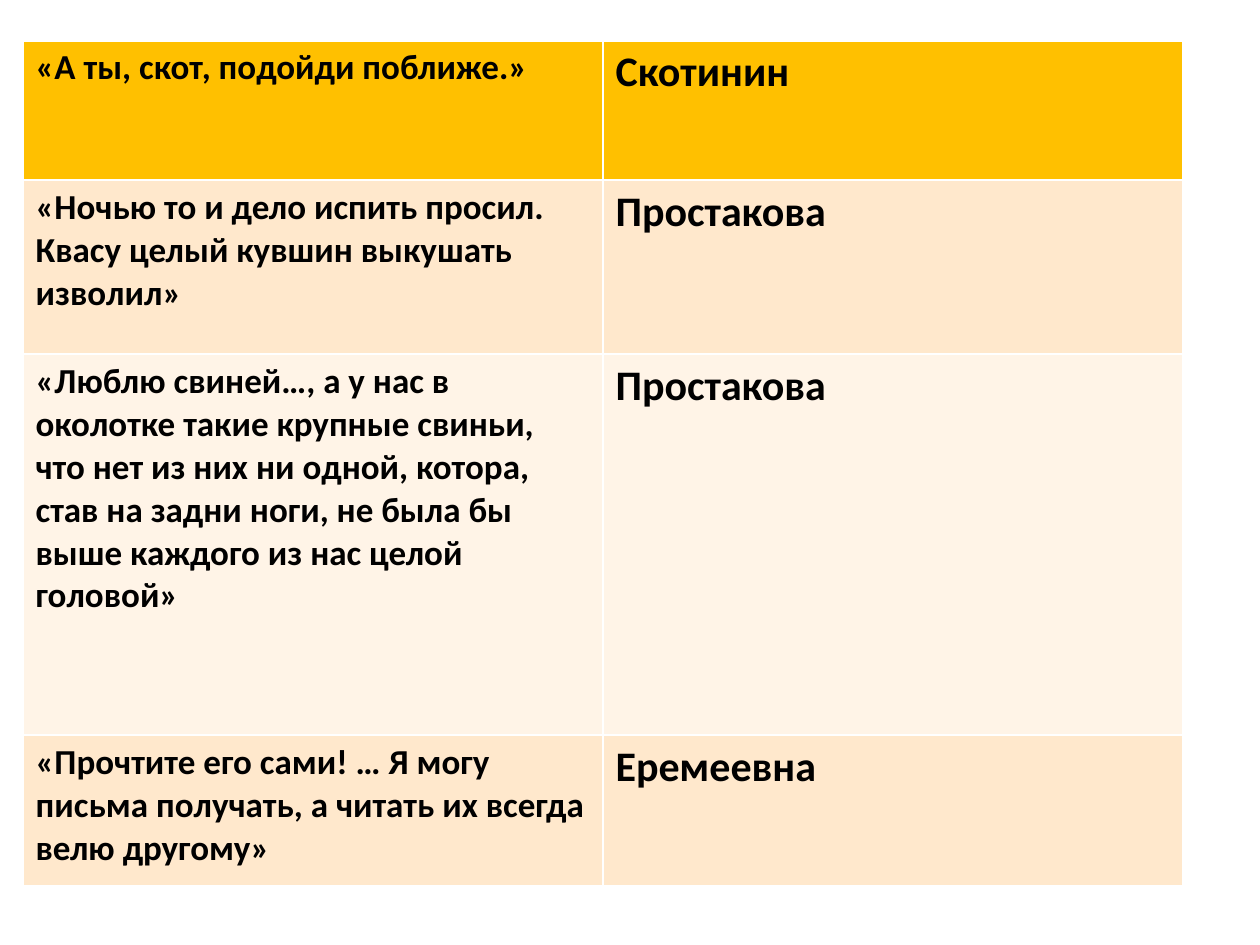
from lxml.etree import SubElement
from pptx import Presentation
from pptx.dml.color import RGBColor
from pptx.oxml.ns import qn
from pptx.util import Emu, Pt

EMU_PER_PX = 914400 / 126
COLORS = {
    "text": "000000",
    "border": "FFFFFF",
    "header": "FFC000",
    "band": "FFE8CC",
    "light": "FFF4E7",
}
COLUMN_WIDTHS = [580, 580]
QUOTE_SIZE, SPEAKER_SIZE = 20, 24
ROWS = [
    (140, "header", "«А ты, скот, подойди поближе.»", "Скотинин"),
    (174, "band", "«Ночью то и дело испить просил. Квасу целый кувшин "
     "выкушать изволил»", "Простакова"),
    (381, "light", "«Люблю свиней…, а у нас в околотке такие крупные свиньи, "
     "что нет из них ни одной, котора, став на задни ноги, не была бы выше "
     "каждого из нас целой головой»", "Простакова"),
    (151, "band", "«Прочтите его сами! … Я могу письма получать, а читать их "
     "всегда велю другому»", "Еремеевна"),
]


def px(length):
    return Emu(round(length * EMU_PER_PX))


class SlideBuilder:
    font_format = {"name": "Calibri", "bold": True}

    def __init__(self, slide):
        self.slide = slide

    def add_borders(self, cell, widths):
        """Draw cell edges; widths maps L, R, T and B to points."""
        properties = cell._tc.get_or_add_tcPr()
        for side, width in widths.items():
            line = SubElement(properties, qn(f"a:ln{side}"), w=str(Pt(width)))
            fill = SubElement(line, qn("a:solidFill"))
            SubElement(fill, qn("a:srgbClr"), val=COLORS["border"])

    def fill_cell(self, cell, text, size, color, borders):
        self.add_borders(cell, borders)
        cell.fill.solid()
        cell.fill.fore_color.rgb = RGBColor.from_string(COLORS[color])
        cell.text = text
        font = cell.text_frame.paragraphs[0].runs[0].font
        for name, value in {**self.font_format, "size": Pt(size)}.items():
            setattr(font, name, value)
        font.color.rgb = RGBColor.from_string(COLORS["text"])

    def add_table(self, left, top, column_widths, rows):
        height = sum(row[0] for row in rows)
        table = self.slide.shapes.add_table(
            len(rows), len(column_widths), px(left), px(top),
            px(sum(column_widths)), px(height)).table
        for column, width in zip(table.columns, column_widths):
            column.width = px(width)
        for index, (row_height, color, quote, speaker) in enumerate(rows):
            table.rows[index].height = px(row_height)
            borders = {"L": 1, "R": 1, "T": 1 if index else 3, "B": 1}
            contents = [(quote, QUOTE_SIZE), (speaker, SPEAKER_SIZE)]
            for cell, (text, size) in zip(table.rows[index].cells, contents):
                self.fill_cell(cell, text, size, color, borders)


def main():
    presentation = Presentation()
    presentation.slide_width = px(1260)
    presentation.slide_height = px(945)
    slide = presentation.slides.add_slide(presentation.slide_layouts[6])
    SlideBuilder(slide).add_table(23, 40, COLUMN_WIDTHS, ROWS)
    presentation.save("out.pptx")


if __name__ == "__main__":
    main()
